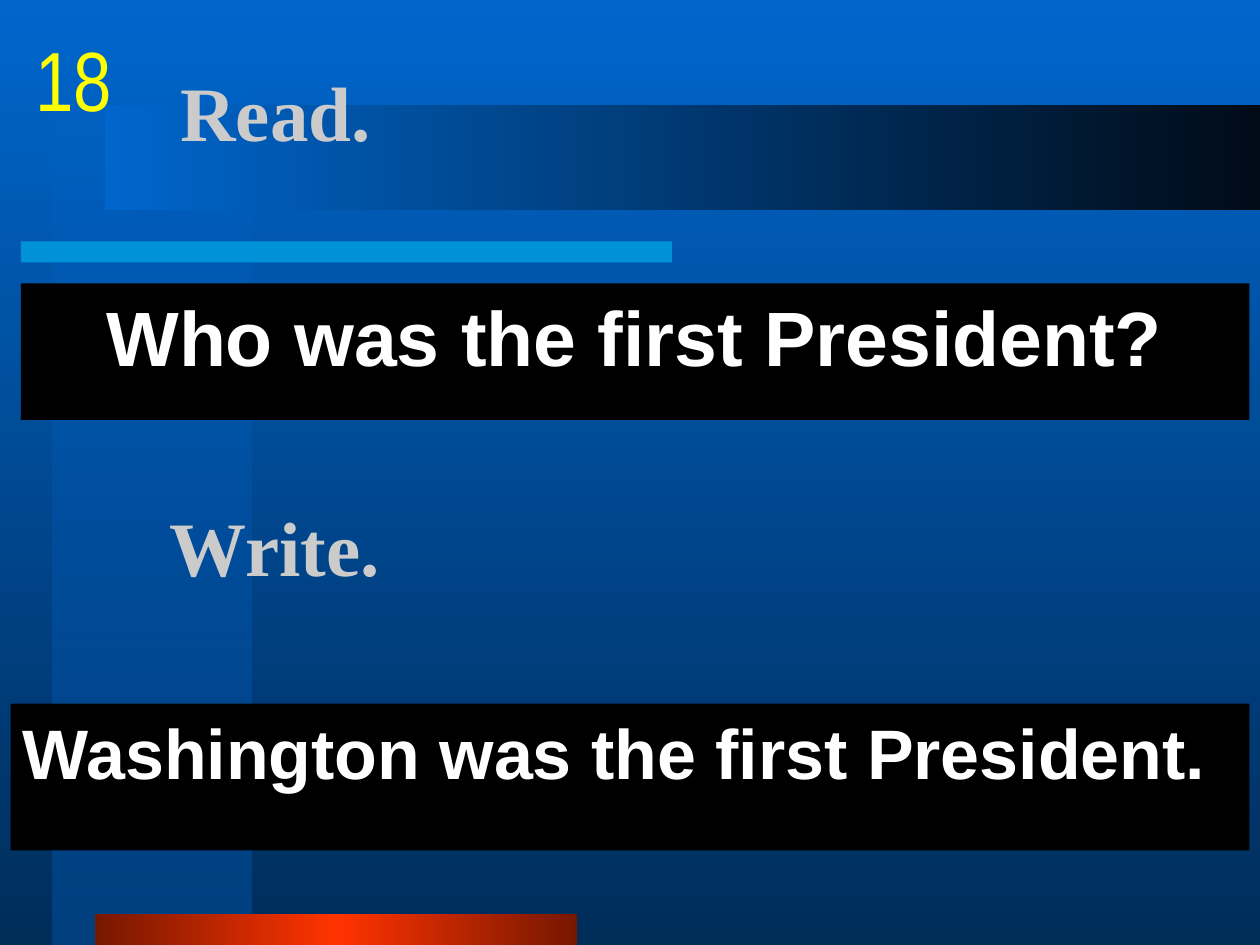
import pptx
import pptx.util
import pptx.dml.color
import pptx.enum.shapes
import pptx.enum.text
import pptx.oxml
import pptx.oxml.ns
from lxml import etree

Pt = pptx.util.Pt
RGB = pptx.dml.color.RGBColor
ALIGN = pptx.enum.text.PP_ALIGN
ANCHOR = pptx.enum.text.MSO_ANCHOR
qn = pptx.oxml.ns.qn

BLUE = RGB(0x00, 0x66, 0xCC)
NAVY = RGB(0x00, 0x2D, 0x5A)
STRIP_BLUE = RGB(0x00, 0x40, 0x80)
NIGHT = RGB(0x00, 0x0B, 0x17)
CYAN = RGB(0x00, 0xCC, 0xFF)
RED = RGB(0xFF, 0x33, 0x00)
DARK_RED = RGB(0x76, 0x17, 0x00)
BLACK = RGB(0x00, 0x00, 0x00)
WHITE = RGB(0xFF, 0xFF, 0xFF)
GREY = RGB(0xCB, 0xCB, 0xCB)
YELLOW = RGB(0xFF, 0xFF, 0x00)

# Gradient stops: (position %, colour, opacity %)
BACKGROUND = [(0, BLUE, 100), (100, NAVY, 100)]

# Decoration: (left, top, width, height), stops, angle in degrees
BARS = [
    ((30, 0, 114, 540), [(0, BLUE, 50), (100, STRIP_BLUE, 100)], 90),
    ((12, 138, 372, 12), [(0, CYAN, 50), (100, CYAN, 50)], 0),
    ((54, 522, 276, 18), [(0, DARK_RED, 100), (50, RED, 100), (100, DARK_RED, 100)], 0),
    ((60, 60, 660, 60), [(0, BLUE, 100), (100, NIGHT, 100)], 0),
]

# Instructions: text, (left, top, width, height)
INSTRUCTIONS = [
    ("Read.", (96, 18, 612, 90)),
    ("Write.", (90, 252, 612, 120)),
]

# Sentences on black panels: text, place, size, alignment
SENTENCES = [
    ("Who was the first President?", (12, 162, 702, 78), 44, ALIGN.CENTER),
    ("Washington was the first President.", (6, 402, 708, 84), 40, ALIGN.LEFT),
]

NUMBER = ("18", (12, 12, 60, 60))


def set_gradient(fill, owner, stops, angle):
    """Give the fill of owner the listed stops, running clockwise by angle."""
    fill.gradient()
    gradient = next(owner.iter(qn("a:gradFill")))
    stop_list = gradient.find(qn("a:gsLst"))
    for stop in list(stop_list):
        stop_list.remove(stop)
    for position, color, opacity in stops:
        stop = etree.SubElement(stop_list, qn("a:gs"), pos=str(position * 1000))
        tint = etree.SubElement(stop, qn("a:srgbClr"), val=str(color))
        if opacity < 100:
            etree.SubElement(tint, qn("a:alpha"), val=str(opacity * 1000))
    gradient.find(qn("a:lin")).set("ang", str(angle * 60000))


def add_bar(page, place, stops, angle):
    bar = page.shapes.add_shape(
        pptx.enum.shapes.MSO_SHAPE.RECTANGLE, *map(Pt, place))
    bar.shadow.inherit = False
    bar.line.fill.background()
    set_gradient(bar.fill, bar.element, stops, angle)


def add_text(page, text, place, font, size, color, bold=True,
             align=ALIGN.LEFT, anchor=ANCHOR.TOP, wrap=True):
    box = page.shapes.add_textbox(*map(Pt, place))
    frame = box.text_frame
    frame.word_wrap = wrap
    frame.vertical_anchor = anchor
    frame.text = text
    para = frame.paragraphs[0]
    para.alignment = align
    span = para.runs[0]
    span.font.name = font
    span.font.size = Pt(size)
    span.font.bold = bold
    span.font.color.rgb = color
    return box


def main():
    deck = pptx.Presentation()
    deck.slide_width, deck.slide_height = Pt(720), Pt(540)
    page = deck.slides.add_slide(deck.slide_layouts[6])

    # Background and bars
    set_gradient(page.background.fill, page.element, BACKGROUND, 90)
    for bar in BARS:
        add_bar(page, *bar)

    # Instructions
    for text, place in INSTRUCTIONS:
        add_text(page, text, place, "Times New Roman", 44, GREY,
                 anchor=ANCHOR.MIDDLE)

    # Sentences with a hanging indent
    for text, place, size, align in SENTENCES:
        panel = add_text(page, text, place, "Arial", size, WHITE, align=align)
        panel.fill.solid()
        panel.fill.fore_color.rgb = BLACK
        para = panel.text_frame.paragraphs[0]
        para.space_before = Pt(size / 10)
        settings = para._p.get_or_add_pPr()
        settings.set("marL", str(Pt(27)))
        settings.set("indent", str(Pt(-27)))

    # Question number
    text, place = NUMBER
    add_text(page, text, place, "Arial Narrow", 48, YELLOW, bold=False,
             align=ALIGN.CENTER, wrap=False)

    deck.save("out.pptx")


if __name__ == "__main__":
    main()
